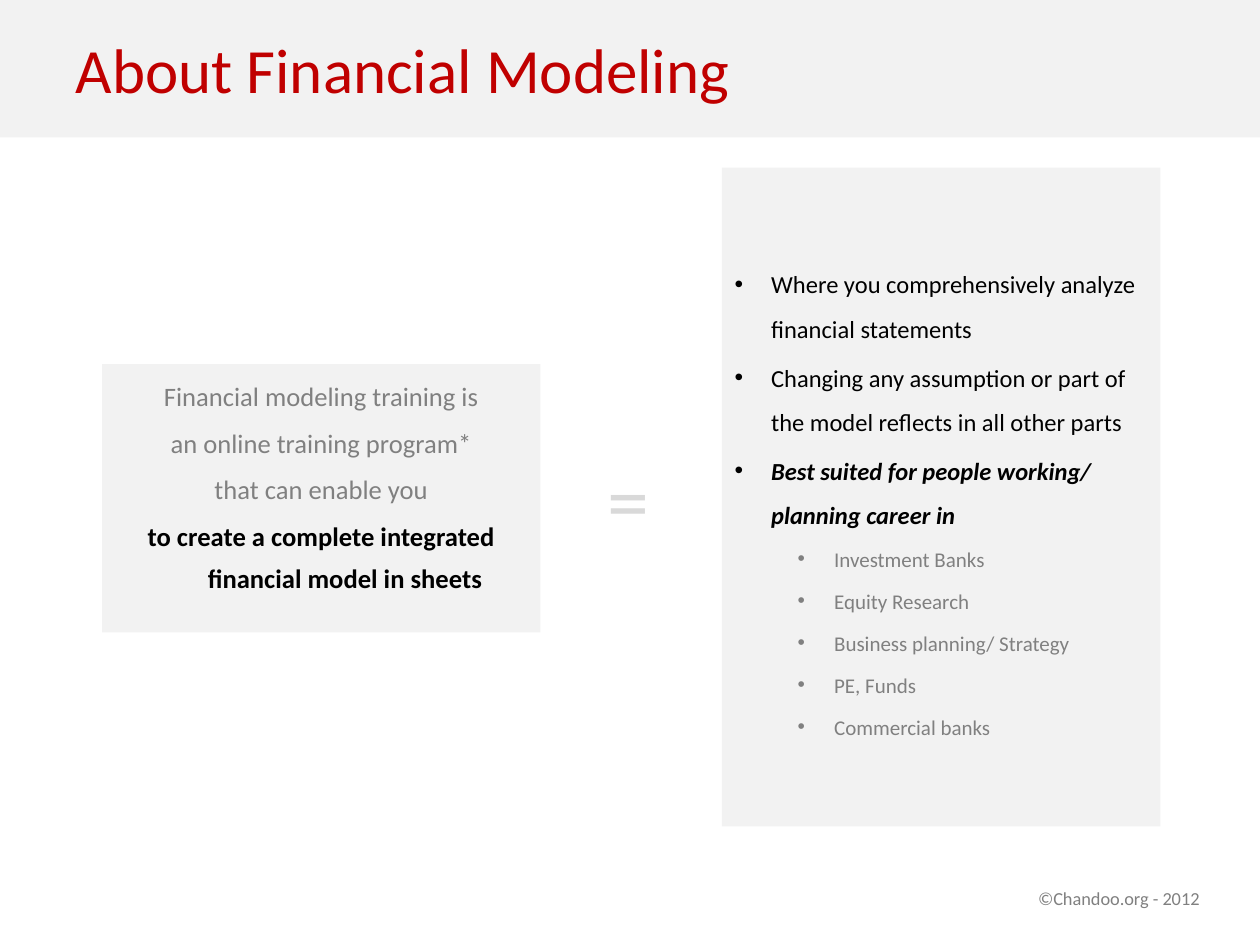
from lxml.etree import SubElement
from pptx import Presentation
from pptx.dml.color import RGBColor
from pptx.enum.shapes import MSO_SHAPE
from pptx.enum.text import MSO_ANCHOR, MSO_AUTO_SIZE, PP_ALIGN
from pptx.oxml.ns import qn
from pptx.util import Inches, Pt

COLORS = {"panel": "F2F2F2", "title": "C00000", "muted": "808080",
          "strong": "000000", "equals": "D9D9D9"}
PANEL_WIDTH = 3.48

DEFINITION = ["Financial modeling training is", "an online training program*",
              "that can enable you"]
OUTCOME = "to create a complete integrated financial model in sheets"
FEATURES = ["Where you comprehensively analyze financial statements",
            "Changing any assumption or part of the model reflects in all other parts"]
AUDIENCE = "Best suited for people working/ planning career in"
EMPLOYERS = ["Investment Banks", "Equity Research", "Business planning/ Strategy",
             "PE, Funds", "Commercial banks"]


def place(shape, left, top, width, height):
    shape.left, shape.top = Inches(left), Inches(top)
    shape.width, shape.height = Inches(width), Inches(height)


def fill(shape, color):
    shape.fill.solid()
    shape.fill.fore_color.rgb = RGBColor.from_string(COLORS[color])


def set_indent(paragraph, margin, hanging, bullet):
    properties = paragraph._p.get_or_add_pPr()
    properties.set("marL", str(Inches(margin)))
    properties.set("indent", str(-Inches(hanging)))
    if bullet:
        SubElement(properties, qn("a:buChar"), char=bullet)
    else:
        SubElement(properties, qn("a:buNone"))


def add_text(frame, text, size, color, bold=False, italic=False, level=0,
             align=PP_ALIGN.LEFT, spacing=1.0, indent=None, bullet=None):
    """Write text in the frame's empty first paragraph, or in a new one."""
    first = not frame.text
    paragraph = frame.paragraphs[0] if first else frame.add_paragraph()
    if indent:
        set_indent(paragraph, *indent, bullet)
    paragraph.level = level
    paragraph.alignment = align
    paragraph.line_spacing = spacing
    paragraph.space_before = Pt(0 if first else round(size * 0.2, 1))
    run = paragraph.add_run()
    run.text = text
    font = run.font
    font.name, font.size, font.bold, font.italic = "Calibri", Pt(size), bold, italic
    font.color.rgb = RGBColor.from_string(COLORS[color])


def add_header(slide):
    band = slide.shapes.add_shape(MSO_SHAPE.RECTANGLE, 0, 0, Inches(10), Inches(1.09))
    band.shadow.inherit = False
    fill(band, "panel")
    band.line.fill.background()
    title = slide.shapes.title
    title.element.addprevious(band.element)
    place(title, 0.5, 0, 9, 1.09)
    title.text_frame.vertical_anchor = MSO_ANCHOR.MIDDLE
    add_text(title.text_frame, "About Financial Modeling", 36, "title")


def prepare_panel(panel, left, top, height, anchor):
    place(panel, left, top, PANEL_WIDTH, height)
    fill(panel, "panel")
    frame = panel.text_frame
    frame.auto_size = MSO_AUTO_SIZE.NONE
    frame.vertical_anchor = anchor
    return frame


def add_label(slide, text, left, top, width, height, **text_format):
    box = slide.shapes.add_textbox(Inches(left), Inches(top), Inches(width), Inches(height))
    box.text_frame.word_wrap = False
    add_text(box.text_frame, text, **text_format)


def main():
    presentation = Presentation()
    presentation.slide_width, presentation.slide_height = Inches(10), Inches(7.5)
    slide = presentation.slides.add_slide(presentation.slide_layouts.get_by_name("Two Content"))
    add_header(slide)

    definition = prepare_panel(slide.placeholders[1], 0.81, 2.89, 2.13, MSO_ANCHOR.TOP)
    centered = {"size": 15.2, "align": PP_ALIGN.CENTER, "spacing": 1.3, "indent": (0.38, 0.38)}
    for line in DEFINITION:
        add_text(definition, line, color="muted", **centered)
    add_text(definition, OUTCOME, color="strong", bold=True, **centered)

    details = prepare_panel(slide.placeholders[2], 5.73, 1.33, 5.23, MSO_ANCHOR.MIDDLE)
    bulleted = {"spacing": 1.5, "bullet": "•"}
    main_item = {"size": 14, "color": "strong", "indent": (0.29, 0.29), **bulleted}
    for feature in FEATURES:
        add_text(details, feature, **main_item)
    add_text(details, AUDIENCE, bold=True, italic=True, **main_item)
    for employer in EMPLOYERS:
        add_text(details, employer, size=12, color="muted", level=1,
                 indent=(0.79, 0.29), **bulleted)

    add_label(slide, "=", 4.72, 3.5, 0.54, 0.91, size=48, color="equals")
    add_label(slide, "©Chandoo.org - 2012", 8.14, 6.99, 1.51, 0.28, size=10.5, color="muted")
    presentation.save("out.pptx")


if __name__ == "__main__":
    main()
